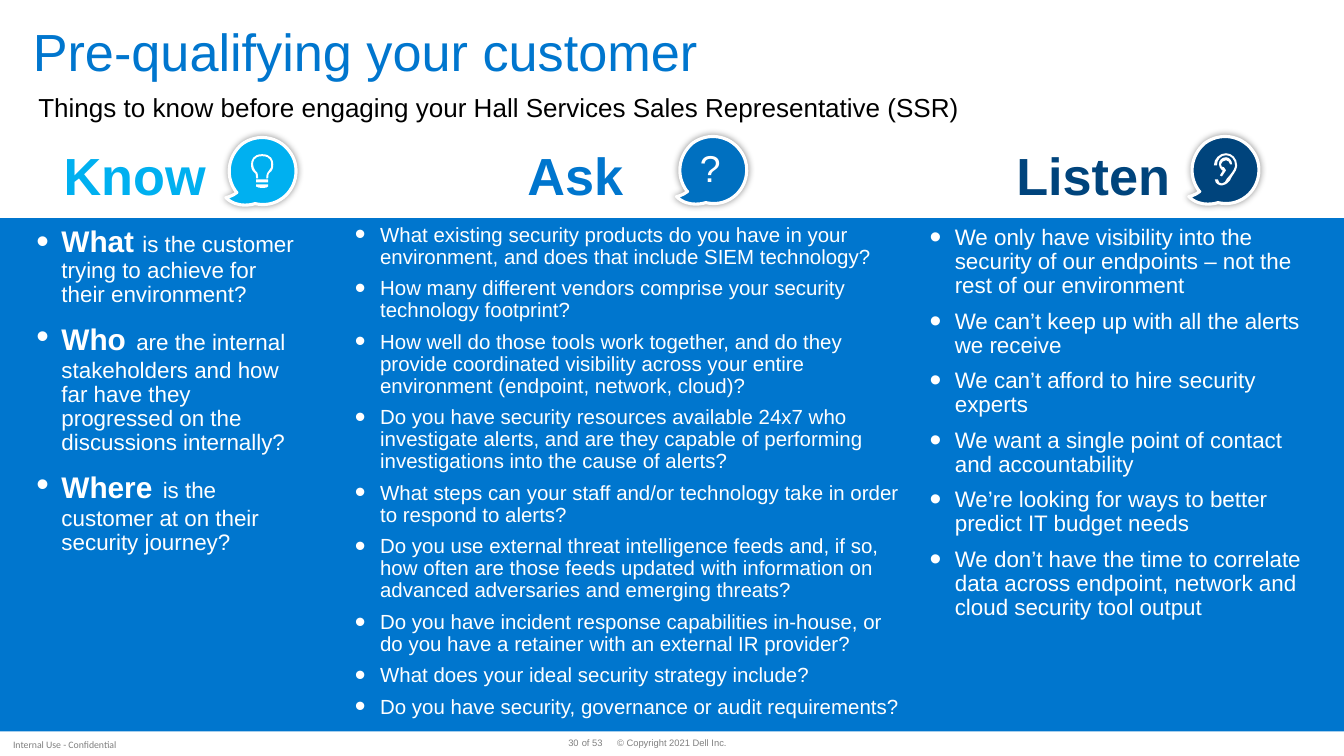
import collections

import pptx
import pptx.dml.color
import pptx.enum.shapes
import pptx.enum.text
import pptx.oxml
import pptx.oxml.ns
import pptx.util

RGB = pptx.dml.color.RGBColor
ALIGN = pptx.enum.text.PP_ALIGN
ANCHOR = pptx.enum.text.MSO_ANCHOR
RECTANGLE = pptx.enum.shapes.MSO_SHAPE.RECTANGLE
WHITE, BLACK = RGB(0xFF, 0xFF, 0xFF), RGB(0, 0, 0)
BLUE, SKY = RGB(0x00, 0x76, 0xCE), RGB(0x00, 0xB0, 0xF0)
MID_BLUE, NAVY = RGB(0x00, 0x70, 0xC0), RGB(0x00, 0x44, 0x7C)
GRAY, DARK_GRAY = RGB(0x80, 0x80, 0x80), RGB(0x7F, 0x7F, 0x7F)

# The page is a grid of 133.3 columns by 75 rows, with square cells
COLUMNS, ROWS = 133.3, 75
Box = collections.namedtuple("Box", "left top width height")

# Icon outlines in tenths of a cell: pairs are corners, sixes are curves
BUBBLE = [(60, 65), (74, 54, 77, 33, 66, 19), (55, 4, 34, 1, 19, 12), (5, 24, 2, 44, 13, 59),
          (14, 59, 14, 60, 14, 60), (9, 64, 3, 65, 3, 65), (15, 77, 32, 71, 32, 71),
          (41, 73, 51, 72, 60, 65)]
BULB = [(39, 22), (30, 22, 28, 28, 28, 32), (28, 36, 29, 38, 30, 39), (32, 40, 33, 41, 33, 46),
        (35, 46), (35, 41, 34, 39, 32, 38), (31, 36, 30, 35, 30, 32), (30, 30, 30, 24, 39, 24),
        (48, 24, 48, 30, 48, 32), (48, 35, 48, 36, 46, 38), (45, 39, 43, 41, 43, 46),
        (45, 46), (45, 41, 46, 40, 48, 39), (49, 38, 50, 36, 50, 32), (50, 28, 48, 22, 39, 22)]
BULB_FOOT = [(33, 52), (45, 52), (45, 54), (44, 56, 35, 56, 33, 54)]
OUTER_EAR = [(40, 22), (34, 22, 28, 27, 28, 34), (31, 34), (31, 28, 35, 24, 40, 24),
             (45, 24, 49, 28, 49, 34), (49, 34, 49, 37, 46, 41), (43, 45, 41, 47, 41, 47),
             (40, 50, 38, 52, 36, 52), (34, 52, 32, 51, 32, 48), (29, 48),
             (29, 52, 33, 54, 36, 54), (39, 54, 41, 52, 44, 49), (44, 49, 45, 46, 48, 42),
             (51, 38, 51, 34, 51, 34), (51, 27, 46, 22, 40, 22)]
INNER_EAR = [(40, 29), (42, 29, 44, 31, 44, 33), (46, 33), (46, 29, 43, 26, 40, 26),
             (36, 26, 33, 29, 33, 33), (33, 35, 34, 37, 36, 39), (37, 39), (34, 44), (36, 45),
             (40, 39), (38, 36), (36, 36, 35, 35, 35, 33), (35, 31, 38, 29, 40, 29)]

# Each item: bold lead, size of the gap after it, remaining text
KNOW = [("What", 21.3, "is the customer trying to achieve for their environment?"),
        ("Who", 26.7, "are the internal stakeholders and how far have they progressed on the "
                      "discussions internally?"),
        ("Where", 26.7, "is the customer at on their security journey?")]
ASK = [
    "What existing security products do you have in your environment, and does that include "
    "SIEM technology?",
    "How many different vendors comprise your security technology footprint?",
    "How well do those tools work together, and do they provide coordinated visibility across "
    "your entire environment (endpoint, network, cloud)?",
    "Do you have security resources available 24x7 who investigate alerts, and are they capable "
    "of performing investigations into the cause of alerts?",
    "What steps can your staff and/or technology take in order to respond to alerts?",
    "Do you use external threat intelligence feeds and, if so, how often are those feeds updated "
    "with information on advanced adversaries and emerging threats?",
    "Do you have incident response capabilities in-house, or do you have a retainer with an "
    "external IR provider?",
    "What does your ideal security strategy include?",
    "Do you have security, governance or audit requirements?"]
LISTEN = [
    "We only have visibility into the security of our endpoints – not the rest of our environment",
    "We can’t keep up with all the alerts we receive",
    "We can’t afford to hire security experts",
    "We want a single point of contact and accountability",
    "We’re looking for ways to better predict IT budget needs",
    "We don’t have the time to correlate data across endpoint, network and cloud security tool "
    "output"]


def cells(count):
    return pptx.util.Inches(count / 10)


def write(para, text, size=16, colour=WHITE, bold=False, font="Arial"):
    span = para.add_run()
    span.text = text
    span.font.size = pptx.util.Pt(size)
    span.font.color.rgb = colour
    span.font.bold = bold
    span.font.name = font


def add_mark(parent, tag, **attributes):
    mark = pptx.oxml.parse_xml(f"<{tag} {pptx.oxml.ns.nsdecls('a')}/>")
    for name, value in attributes.items():
        mark.set(name, str(value))
    parent.append(mark)
    return mark


def format_para(para, indent=0, hang=0, bullet=None, before=0, after=0, spacing=0.9,
                align=ALIGN.LEFT):
    settings = para._p.get_or_add_pPr()
    settings.set("marL", str(cells(indent)))
    settings.set("indent", str(-cells(hang)))
    if bullet:
        add_mark(add_mark(settings, "a:buClr"), "a:srgbClr", val=WHITE)
        add_mark(settings, "a:buSzPct", val=bullet * 1000)
        add_mark(settings, "a:buFont", typeface="Arial")
        add_mark(settings, "a:buChar", char="•")
    else:
        add_mark(settings, "a:buNone")
    para.line_spacing = spacing
    para.space_before = pptx.util.Pt(before)
    para.space_after = pptx.util.Pt(after)
    para.alignment = align


def place(shape, box, insets=(0, 0, 0, 0), anchor=ANCHOR.TOP, wrap=True):
    shape.left, shape.top, shape.width, shape.height = map(cells, box)
    frame = shape.text_frame
    frame.auto_size = pptx.enum.text.MSO_AUTO_SIZE.NONE
    frame.word_wrap = wrap
    frame.vertical_anchor = anchor
    (frame.margin_left, frame.margin_top,
     frame.margin_right, frame.margin_bottom) = map(cells, insets)
    return frame.paragraphs[0]


def fill_line(shape, box, text, insets=(0, 0, 0, 0), anchor=ANCHOR.TOP, wrap=True,
              spacing=0.9, align=ALIGN.LEFT, **style):
    para = place(shape, box, insets, anchor, wrap)
    format_para(para, spacing=spacing, align=align)
    write(para, text, **style)


def fill_column(holder, box, heading, colour, indent, items, size=16, before=8, bullet=150,
                inset=1.3):
    """Heading above the band and bulleted list on it, in one text body."""
    para = place(holder, box, (inset, 0.7, 1.3, 0.7))
    format_para(para, indent, after=6)
    write(para, heading, 37.3, colour, bold=True)
    for item in items:
        para = holder.text_frame.add_paragraph()
        format_para(para, 2.5, 2.5, bullet, before)
        if isinstance(item, tuple):
            lead, gap, item = item
            write(para, lead, 21.3, bold=True)
            write(para, " ", gap)
        write(para, item, size)


def fill_shape(shape, colour):
    shape.shadow.inherit = False
    shape.fill.solid()
    shape.fill.fore_color.rgb = colour
    shape.line.fill.background()
    return shape


def draw_outline(shapes, box, outline, colour):
    """Build the outline through its end points, then bend its curved sides."""
    corners = [(cells(box.left + part[-2] / 10), cells(box.top + part[-1] / 10))
               for part in outline]
    builder = shapes.build_freeform(*corners[0], scale=1.0)
    builder.add_line_segments(corners[1:], close=False)
    shape = builder.convert_to_shape()
    left, top = (min(values) for values in zip(*corners))
    sides = shape._element.findall(".//" + pptx.oxml.ns.qn("a:lnTo"))
    for side, part in zip(sides, outline[1:]):
        if len(part) == 6:
            curve = add_mark(side.getparent(), "a:cubicBezTo")
            for x, y in zip(part[::2], part[1::2]):
                add_mark(curve, "a:pt", x=cells(box.left + x / 10) - left,
                         y=cells(box.top + y / 10) - top)
            side.getparent().replace(side, curve)
    return fill_shape(shape, colour)


def draw_bubble(shapes, box, colour):
    bubble = draw_outline(shapes, box, BUBBLE, colour)
    bubble.line.color.rgb = WHITE
    bubble.line.width = pptx.util.Pt(2.25)
    effects = bubble._element.spPr.find(pptx.oxml.ns.qn("a:effectLst"))
    glow = add_mark(effects, "a:outerShdw", blurRad=pptx.util.Pt(5), dist=0, dir=0,
                    algn="ctr", rotWithShape=0)
    add_mark(add_mark(glow, "a:srgbClr", val=BLACK), "a:alpha", val=40000)


def draw_know_icon(page, box):
    shapes = page.shapes.add_group_shape().shapes
    draw_bubble(shapes, box, SKY)
    draw_outline(shapes, box, BULB, WHITE)
    ring = Box(box.left + 3.3, box.top + 4.7, 1.2, 0.3)
    fill_shape(shapes.add_shape(RECTANGLE, *map(cells, ring)), WHITE)
    draw_outline(shapes, box, BULB_FOOT, WHITE)


def draw_listen_icon(page, box):
    shapes = page.shapes.add_group_shape().shapes
    draw_bubble(shapes, box, NAVY)
    for outline in (OUTER_EAR, INNER_EAR):
        draw_outline(shapes, box, outline, WHITE)


def draw_ask_icon(page, box):
    draw_bubble(page.shapes, box, MID_BLUE)
    fill_line(page.shapes.add_textbox(0, 0, 0, 0), Box(box.left + 1.6, box.top + 1.4, 4.1, 4.5),
              "?", spacing=1, align=ALIGN.CENTER, size=26.7)


def draw_footer(page, box):
    parts = [("Internal Use - Confidential", 1.3, 13, ALIGN.LEFT, 7, DARK_GRAY, "Calibri"),
             ("30", 56.2, 1.2, ALIGN.RIGHT, 6.7, GRAY, "Arial"),
             ("of 53", 57.7, 2.1, ALIGN.LEFT, 6.7, GRAY, "Arial"),
             ("© Copyright 2021 Dell Inc.", 61.2, 11, ALIGN.LEFT, 6.7, GRAY, "Arial")]
    for text, offset, width, align, size, colour, font in parts:
        drop = 0.1 if font == "Calibri" else 0
        fill_line(page.shapes.add_textbox(0, 0, 0, 0),
                  Box(box.left + offset, box.top + drop, width, box.height), text,
                  anchor=ANCHOR.MIDDLE, wrap=False, align=align, size=size, colour=colour,
                  font=font)


def build_slide(deck):
    page = deck.slides.add_slide(deck.slide_layouts.get_by_name("Comparison"))
    title, subtitle, know, ask, listen = page.placeholders

    # Blue band behind the lists
    band = page.shapes.add_shape(RECTANGLE, *map(cells, (0, 21.65, COLUMNS, 50.9)))
    fill_shape(band, BLUE)
    title._element.addprevious(band._element)

    # Title and subtitle
    fill_line(title, Box(2.25, 2.1, 124.2, 9.4), "Pre-qualifying your customer",
              (1, 0.5, 1, 0.5), size=37.3, colour=BLUE)
    fill_line(subtitle, Box(3.8, 9.1, 125, 3.1),
              "Things to know before engaging your Hall Services Sales Representative (SSR)",
              spacing=1, size=18.6, colour=BLACK)

    # Three columns
    fill_column(know, Box(2.3, 14.25, 28.7, 41.9), "Know", SKY, 2.7, KNOW, bullet=120)
    fill_column(ask, Box(35.2, 14.2, 55.6, 58.9), "Ask", BLUE, 17.1, ASK, size=14.6,
                before=6.7, inset=0)
    fill_column(listen, Box(90.9, 14.2, 39.8, 49.9), "Listen", NAVY, 8.6, LISTEN)

    # Speech bubbles beside the headings
    draw_know_icon(page, Box(22.1, 13.1, 7.6, 8.3))
    draw_listen_icon(page, Box(117.6, 13, 7.6, 8.3))
    draw_ask_icon(page, Box(66.8, 13, 7.6, 8.3))

    draw_footer(page, Box(0, 73.3, COLUMNS, 1))


def main():
    deck = pptx.Presentation()
    deck.slide_width, deck.slide_height = cells(COLUMNS), cells(ROWS)
    build_slide(deck)
    deck.save("out.pptx")


if __name__ == "__main__":
    main()
